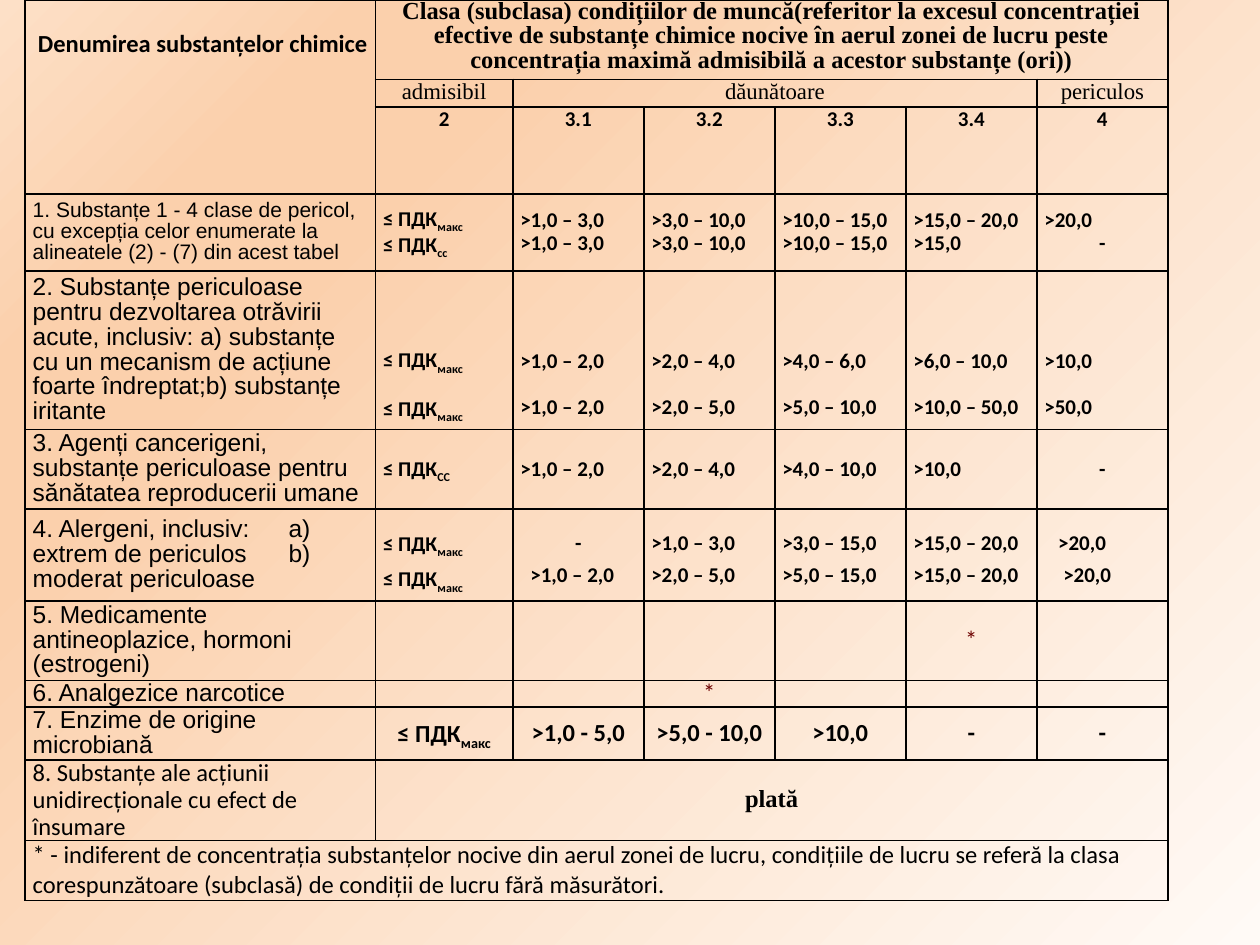
"""Build a slide with a table of work condition classes by chemical excess."""
import dataclasses
import typing

import lxml.etree
import pptx
import pptx.dml.color
import pptx.enum.text
import pptx.oxml
import pptx.oxml.ns
import pptx.util

Inches = pptx.util.Inches
Pt = pptx.util.Pt
Align = pptx.enum.text.PP_ALIGN
Anchor = pptx.enum.text.MSO_ANCHOR
qn = pptx.oxml.ns.qn


@dataclasses.dataclass(frozen=True)
class Theme:
    """Colours, fonts and type sizes of the slide."""
    ink: str = "000000"
    star: str = "6C0000"
    glow: tuple = ((0, "FFFAF6"), (74, "FBD0AC"), (83, "FBD0AC"), (100, "FDE0C7"))
    sans: str = "Arial"
    body: str = "Calibri"
    serif: str = "Times New Roman"
    large: float = 14
    mid: float = 13
    small: float = 12
    tight: float = 0.9


@dataclasses.dataclass(frozen=True)
class Row:
    """One group of substances: its name, its limits and their format."""
    name: str
    limits: tuple
    name_size: float = 14
    size: float = 12
    top: float = 0
    gap: float = 0
    align: typing.Any = Align.LEFT
    anchor: typing.Any = Anchor.MIDDLE
    pads: dict = dataclasses.field(default_factory=dict)
    tab: float = 0


LOOK = Theme()
WIDTHS = [2.78, 1.09] + [1.04] * 5
HEIGHTS = [0.63, 0.22, 0.69, 0.61, 1.26, 0.63, 0.73, 0.63, 0.21, 0.42, 0.63, 0.46]
HEAD = 3
TITLE = ("Clasa (subclasa) condițiilor de muncă(referitor la excesul concentrației "
         "efective de substanțe chimice nocive în aerul zonei de lucru peste "
         "concentrația maximă admisibilă a acestor substanțe (ori))")
NOTE = ("* - indiferent de concentrația substanțelor nocive din aerul zonei de lucru, "
        "condițiile de lucru se referă la clasa corespunzătoare (subclasă) de condiții "
        "de lucru fără măsurători.")
ROWS = [
    Row("1. Substanțe 1 - 4 clase de pericol, cu excepția celor enumerate la "
        "alineatele (2) - (7) din acest tabel",
        ("≤ ПДК_макс\n≤ ПДК_сс", ">1,0 – 3,0\n>1,0 – 3,0", ">3,0 – 10,0\n>3,0 – 10,0",
         ">10,0 – 15,0\n>10,0 – 15,0", ">15,0 – 20,0\n>15,0", ">20,0\n-"),
        name_size=LOOK.small),
    Row("2. Substanțe periculoase pentru dezvoltarea otrăvirii acute, inclusiv: "
        "a) substanțe cu un mecanism de acțiune foarte îndreptat;b) substanțe iritante",
        ("≤ ПДК_макс\n≤ ПДК_макс", ">1,0 – 2,0\n>1,0 – 2,0", ">2,0 – 4,0\n>2,0 – 5,0",
         ">4,0 – 6,0\n>5,0 – 10,0", ">6,0 – 10,0\n>10,0 – 50,0", ">10,0\n>50,0"),
        top=0.55, gap=13),
    Row("3. Agenți cancerigeni, substanțe periculoase pentru sănătatea reproducerii umane",
        ("≤ ПДК_СС", ">1,0 – 2,0", ">2,0 – 4,0", ">4,0 – 10,0", ">10,0", "-")),
    Row("4. Alergeni, inclusiv:\ta) extrem de periculos\tb) moderat periculoase",
        ("≤ ПДК_макс\n≤ ПДК_макс", "-\n>1,0 – 2,0", ">1,0 – 3,0\n>2,0 – 5,0",
         ">3,0 – 15,0\n>5,0 – 15,0", ">15,0 – 20,0\n>15,0 – 20,0", ">20,0\n>20,0"),
        top=0.18, gap=5.5, anchor=Anchor.TOP,
        pads={2: (0, 0.08), 6: (0.11, 0.15)}, tab=2.03),
    Row("5. Medicamente antineoplazice, hormoni (estrogeni)", ("", "", "", "", "*", "")),
    Row("6. Analgezice narcotice", ("", "", "*", "", "", "")),
    Row("7. Enzime de origine microbiană",
        ("≤ ПДК_макс", ">1,0 - 5,0", ">5,0 - 10,0", ">10,0", "-", "-"),
        size=LOOK.large, align=Align.CENTER),
]


def put(cell, text: str, *, font: str = LOOK.body, size: float = LOOK.large,
        bold: bool = False, color: str = LOOK.ink, align=Align.LEFT,
        anchor=Anchor.MIDDLE, space: float = LOOK.tight, top: float = 0,
        gap: float = 0, pads: tuple = (), tab: float = 0) -> None:
    """Write lines into a cell; an underscore starts a subscript."""
    cell.margin_top = Inches(top)
    cell.vertical_anchor = anchor
    frame = cell.text_frame
    for i, line in enumerate(text.split("\n")):
        para = frame.paragraphs[0] if i == 0 else frame.add_paragraph()
        para.alignment = Align.CENTER if line == "-" else align
        para.line_spacing = space
        if i and gap:
            para.space_before = Pt(gap)
        props = para._p.get_or_add_pPr()
        if pads and pads[i]:
            props.set("indent", str(Inches(pads[i])))
        if tab:
            tabs = lxml.etree.SubElement(props, qn("a:tabLst"))
            lxml.etree.SubElement(tabs, qn("a:tab"), pos=str(Inches(tab)), algn="l")
        for part, base in zip(line.split("_"), (None, "-25000")):
            run = para.add_run()
            run.text = part
            run.font.name = font
            run.font.size = Pt(size)
            run.font.bold = bold
            run.font.color.rgb = pptx.dml.color.RGBColor.from_string(color)
            if base:
                run.font._element.set("baseline", base)


def clear(cell) -> None:
    """Give a cell plain borders, no fill, narrow margins and small empty text."""
    cell.margin_left = cell.margin_right = Inches(0.06)
    cell.margin_top = cell.margin_bottom = 0
    props = cell._tc.get_or_add_tcPr()
    for side in ("lnL", "lnR", "lnT", "lnB"):
        line = lxml.etree.SubElement(props, qn(f"a:{side}"), w=str(Pt(1)))
        fill = lxml.etree.SubElement(line, qn("a:solidFill"))
        lxml.etree.SubElement(fill, qn("a:srgbClr"), val=LOOK.ink)
    cell.fill.background()
    para = cell.text_frame.paragraphs[0]._p
    lxml.etree.SubElement(para, qn("a:endParaRPr"), sz=str(Pt(8).pt * 100).split(".")[0])


def paint(slide) -> None:
    """Fill the background with a glow from the lower right corner."""
    fill = slide.background.fill
    fill.gradient()
    grad = slide._element.find(".//" + qn("a:gradFill"))
    for child in list(grad):
        grad.remove(child)
    stops = lxml.etree.SubElement(grad, qn("a:gsLst"))
    for pos, color in LOOK.glow:
        stop = lxml.etree.SubElement(stops, qn("a:gs"), pos=str(pos * 1000))
        lxml.etree.SubElement(stop, qn("a:srgbClr"), val=color)
    shade = lxml.etree.SubElement(grad, qn("a:path"), path="circle")
    lxml.etree.SubElement(shade, qn("a:fillToRect"), l="100000", t="100000")


def make_grid(slide):
    """Add the empty table with its merged cells."""
    frame = slide.shapes.add_table(len(HEIGHTS), len(WIDTHS), Inches(0.2), 0,
                                   Inches(sum(WIDTHS)), Inches(sum(HEIGHTS)))
    grid = frame.table
    grid.first_row = grid.horz_banding = False
    for col, width in zip(grid.columns, WIDTHS):
        col.width = Inches(width)
    for row, height in zip(grid.rows, HEIGHTS):
        row.height = Inches(height)
    for cell in grid.iter_cells():
        clear(cell)
    for start, end in (((0, 0), (2, 0)), ((0, 1), (0, 6)), ((1, 2), (1, 5)),
                       ((10, 1), (10, 6)), ((11, 0), (11, 6))):
        grid.cell(*start).merge(grid.cell(*end))
    return grid


def fill_head(grid) -> None:
    """Write the heading rows."""
    put(grid.cell(0, 0), "Denumirea substanțelor chimice", bold=True,
        anchor=Anchor.TOP, space=1, top=0.23, pads=(0.04,))
    put(grid.cell(0, 1), TITLE, font=LOOK.serif, bold=True,
        align=Align.CENTER, anchor=Anchor.TOP)
    for col, text in ((1, "admisibil"), (2, "dăunătoare"), (6, "periculos")):
        put(grid.cell(1, col), text, font=LOOK.serif, size=LOOK.mid,
            align=Align.CENTER, anchor=Anchor.TOP, space=1)
    for col, text in enumerate(("2", "3.1", "3.2", "3.3", "3.4", "4"), 1):
        put(grid.cell(2, col), text, size=LOOK.small, bold=True,
            align=Align.CENTER, anchor=Anchor.TOP, space=1)


def fill_body(grid) -> None:
    """Write the groups of substances and the closing rows."""
    for i, row in enumerate(ROWS, HEAD):
        put(grid.cell(i, 0), row.name, font=LOOK.sans, size=row.name_size, tab=row.tab)
        for col, text in enumerate(row.limits, 1):
            if text == "*":
                put(grid.cell(i, col), text, color=LOOK.star, align=Align.CENTER)
            elif text:
                put(grid.cell(i, col), text, size=row.size, bold=True, align=row.align,
                    anchor=row.anchor, top=row.top, gap=row.gap,
                    pads=row.pads.get(col, ()))
    put(grid.cell(10, 0), "8. Substanțe ale acțiunii unidirecționale cu efect de însumare")
    put(grid.cell(10, 1), "plată", font=LOOK.serif, bold=True, align=Align.CENTER)
    put(grid.cell(11, 0), NOTE, anchor=Anchor.TOP, space=1)


def main() -> None:
    """Build and save the slide."""
    deck = pptx.Presentation()
    deck.slide_width, deck.slide_height = Inches(10), Inches(7.5)
    slide = deck.slides.add_slide(deck.slide_layouts[6])
    paint(slide)
    grid = make_grid(slide)
    fill_head(grid)
    fill_body(grid)
    deck.save("out.pptx")


if __name__ == "__main__":
    main()
